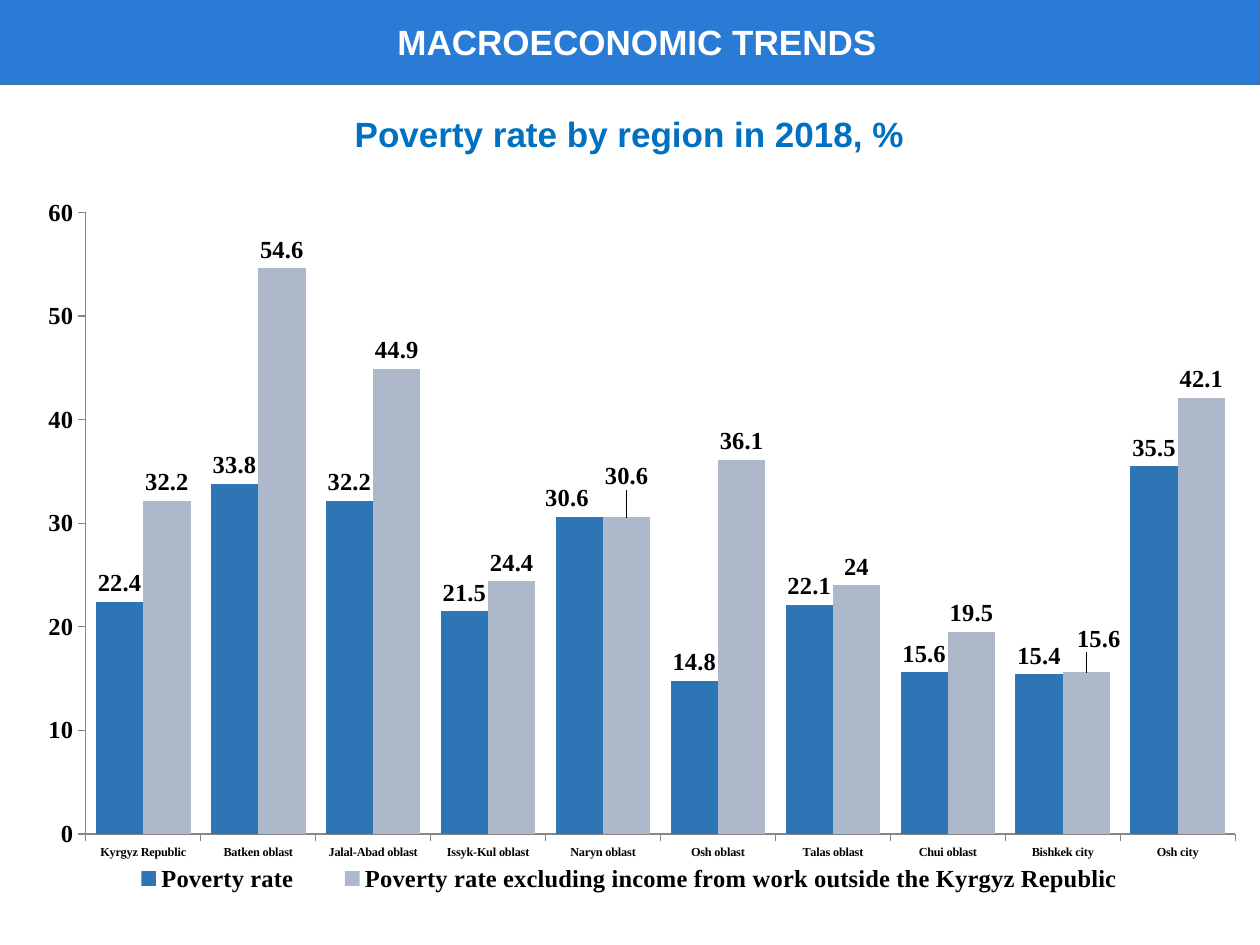
from lxml import etree
from pptx import Presentation
from pptx.chart.data import CategoryChartData
from pptx.dml.color import RGBColor
from pptx.enum.chart import XL_CHART_TYPE, XL_LABEL_POSITION, XL_LEGEND_POSITION, XL_TICK_MARK
from pptx.enum.shapes import MSO_SHAPE
from pptx.enum.text import MSO_ANCHOR, MSO_AUTO_SIZE, PP_ALIGN
from pptx.oxml.ns import qn
from pptx.util import Emu, Pt

PX = 914400 / 126
TITLE_ONLY = 5
RECTANGLE = MSO_SHAPE.RECTANGLE
COLUMNS = XL_CHART_TYPE.COLUMN_CLUSTERED
OUTSIDE_END = XL_LABEL_POSITION.OUTSIDE_END
LEGEND_BOTTOM = XL_LEGEND_POSITION.BOTTOM
TICK_OUTSIDE = XL_TICK_MARK.OUTSIDE

COLORS = {
    "banner": "2A7BD5",
    "banner_line": "43739E",
    "banner_text": "FFFFFF",
    "heading": "0070C0",
    "chart_text": "000000",
    "axis": "868686",
}

REGIONS = ["Kyrgyz Republic", "Batken oblast", "Jalal-Abad oblast", "Issyk-Kul oblast",
           "Naryn oblast", "Osh oblast", "Talas oblast", "Chui oblast", "Bishkek city", "Osh city"]
# Name, colour, values, and label shifts by point as fractions of the chart size
SERIES = [
    ("Poverty rate", "2E75B6",
     [22.4, 33.8, 32.2, 21.5, 30.6, 14.8, 22.1, 15.6, 15.4, 35.5],
     {4: (-0.01, 0), 6: (0, 0)}),
    ("Poverty rate excluding income from work outside the Kyrgyz Republic", "ADB9CA",
     [32.2, 54.6, 44.9, 24.4, 30.6, 36.1, 24, 19.5, 15.6, 42.1],
     {4: (0, -0.03), 8: (0.01, -0.02)}),
]


def px(*lengths):
    return [Emu(round(length * PX)) for length in lengths]


def color(name):
    return RGBColor.from_string(COLORS[name])


def add_banner(slide, box):
    banner = slide.shapes.add_shape(RECTANGLE, *px(*box))
    banner.shadow.inherit = False
    banner.fill.solid()
    banner.fill.fore_color.rgb = color("banner")
    banner.line.color.rgb = color("banner_line")
    banner.line.width = Pt(1)
    slide.shapes.title.element.addprevious(banner.element)


def format_heading(shape, box, text, color_name):
    shape.left, shape.top, shape.width, shape.height = px(*box)
    frame = shape.text_frame
    frame.text = text
    frame.word_wrap = True
    frame.auto_size = MSO_AUTO_SIZE.SHAPE_TO_FIT_TEXT
    frame.vertical_anchor = MSO_ANCHOR.MIDDLE
    paragraph = frame.paragraphs[0]
    paragraph.alignment = PP_ALIGN.CENTER
    font = paragraph.runs[0].font
    font.name, font.size, font.bold = "Arial", Pt(20), True
    font.color.rgb = color(color_name)


def manual_layout(**settings):
    """Return a c:layout element with its settings in schema order."""
    layout = etree.Element(qn("c:layout"))
    manual = etree.SubElement(layout, qn("c:manualLayout"))
    for name, value in settings.items():
        etree.SubElement(manual, qn(f"c:{name}")).set("val", str(value))
    return layout


def place(parent, after, **settings):
    """Replace the layout of a chart part; after is the child it follows, if any."""
    for old in parent.findall(qn("c:layout")):
        parent.remove(old)
    position = 0 if after is None else parent.index(parent.find(qn(after))) + 1
    parent.insert(position, manual_layout(**settings))


def format_series(series, fill, label_shifts):
    series.format.fill.solid()
    series.format.fill.fore_color.rgb = RGBColor.from_string(fill)
    labels = series.data_labels
    labels.show_value = True
    labels.position = OUTSIDE_END
    for index, (x, y) in label_shifts.items():
        series.points[index].data_label.position = OUTSIDE_END
        if x or y:
            label = labels._element.find(f"{qn('c:dLbl')}[{qn('c:idx')}][@val]")
            label = next(item for item in labels._element.findall(qn("c:dLbl"))
                         if item.find(qn("c:idx")).get("val") == str(index))
            place(label, "c:idx", x=x, y=y)


def format_axes(chart):
    for axis in (chart.category_axis, chart.value_axis):
        axis.has_major_gridlines = False
        axis.major_tick_mark = TICK_OUTSIDE
        axis.format.line.color.rgb = color("axis")
    font = chart.category_axis.tick_labels.font
    font.size, font.bold = Pt(7), True
    chart.value_axis.minimum_scale = 0
    chart.value_axis.maximum_scale = 60
    chart.value_axis.major_unit = 10


def add_poverty_chart(slide, box):
    data = CategoryChartData()
    data.categories = REGIONS
    for name, _, values, _ in SERIES:
        data.add_series(name, values)
    chart = slide.shapes.add_chart(COLUMNS, *px(*box), data).chart
    chart.has_title = False
    font = chart.font
    font.name, font.size, font.bold = "Times New Roman", Pt(14), True
    font.color.rgb = color("chart_text")

    plot = chart.plots[0]
    plot.gap_width, plot.overlap, plot.vary_by_categories = 43, 0, False
    for series, (_, fill, _, label_shifts) in zip(plot.series, SERIES):
        format_series(series, fill, label_shifts)
    format_axes(chart)

    chart.has_legend = True
    chart.legend.position = LEGEND_BOTTOM
    chart.legend.include_in_layout = False
    place(chart.legend._element, "c:legendPos", xMode="edge", yMode="edge",
          x=0.06, y=0.91, w=0.86, h=0.06)
    plot_area = chart.plots[0]._element.getparent()
    place(plot_area, None, layoutTarget="inner", xMode="edge", yMode="edge",
          x=0.05, y=0.04, w=0.93, h=0.84)


def main():
    presentation = Presentation()
    presentation.slide_width, presentation.slide_height = px(1260, 945)
    slide = presentation.slides.add_slide(presentation.slide_layouts[TITLE_ONLY])
    add_banner(slide, (-1, -1, 1261, 85))
    format_heading(slide.shapes.title, (106, 14, 1062, 55), "MACROECONOMIC TRENDS", "banner_text")
    subtitle = slide.shapes.add_textbox(0, 0, 0, 0)
    format_heading(subtitle, (33, 106, 1193, 55), "Poverty rate by region in 2018, %", "heading")
    add_poverty_chart(slide, (24, 183, 1236, 740))
    presentation.save("out.pptx")


if __name__ == "__main__":
    main()
